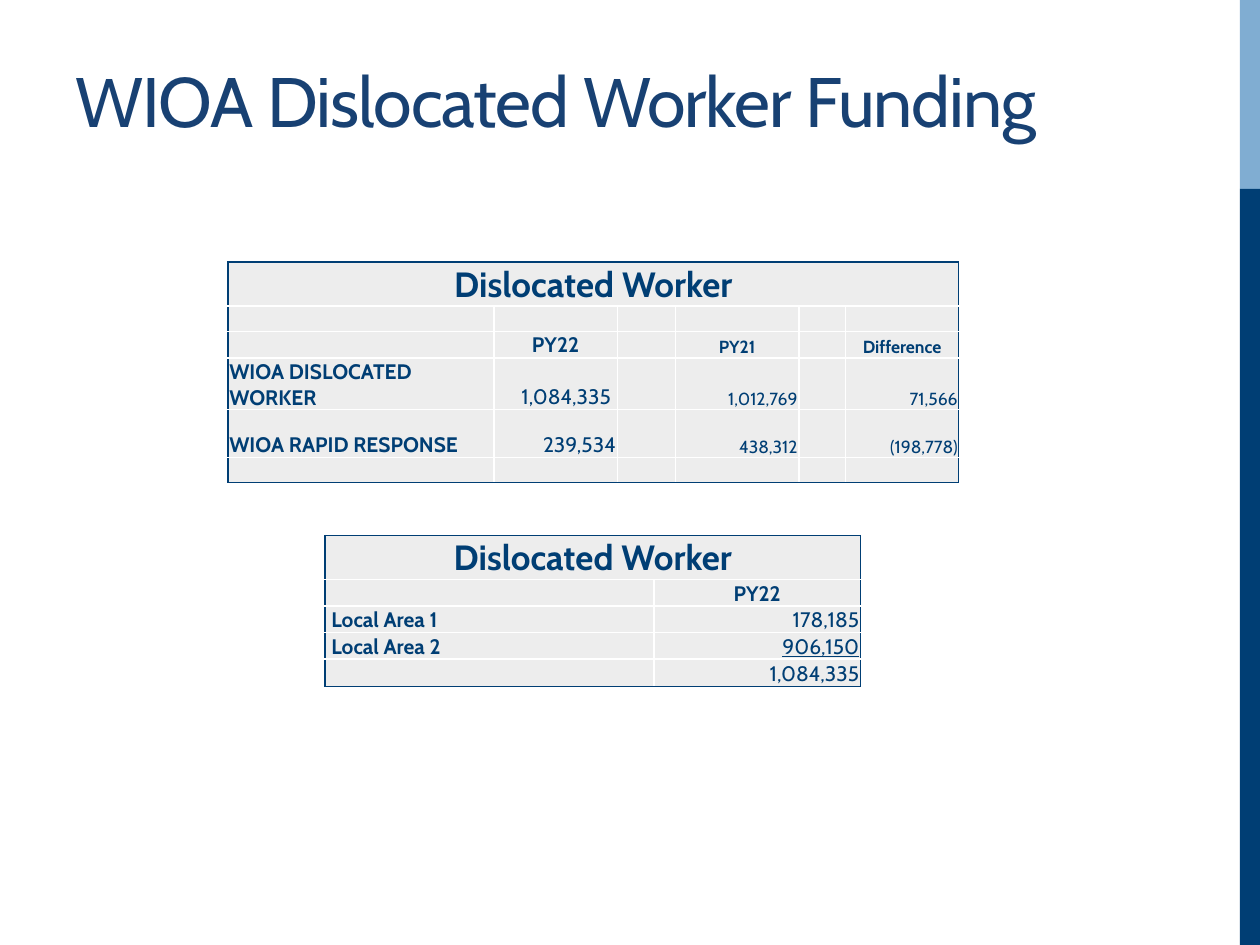
from pptx import Presentation
from pptx.dml.color import RGBColor
from pptx.enum.shapes import MSO_SHAPE
from pptx.enum.text import MSO_ANCHOR, PP_ALIGN
from pptx.oxml.ns import qn
from pptx.util import Inches, Pt
from lxml import etree

RECT = MSO_SHAPE.RECTANGLE
BOTTOM = MSO_ANCHOR.BOTTOM
ALIGN = {"l": PP_ALIGN.LEFT, "c": PP_ALIGN.CENTER, "r": PP_ALIGN.RIGHT}

NAVY, TITLE_BLUE, SKY, GREY, WHITE = "003E74", "184173", "80ADD2", "EDEDED", "FFFFFF"
FONT = "Cabin"
HEADING = dict(size=20, bold=True, align="c")


def rgb(color):
    return RGBColor.from_string(color)


def write(tf, text, size=12, bold=False, color=NAVY, align="l", underline=None, spacing=None):
    """Fill the first paragraph of a text frame; spacing is in hundredths of a point."""
    p = tf.paragraphs[0]
    p.alignment = ALIGN[align]
    r = p.add_run()
    r.text = text
    r.font.name, r.font.size, r.font.bold = FONT, Pt(size), bold
    r.font.underline = underline
    r.font.color.rgb = rgb(color)
    if spacing is not None:
        r.font._element.set("spc", str(spacing))


def border(cell, side, color):
    """Draw one side (L, R, T or B) of a table cell, one point wide."""
    line = etree.SubElement(cell._tc.get_or_add_tcPr(), qn(f"a:ln{side}"), w=str(Pt(1)))
    fill = etree.SubElement(line, qn("a:solidFill"))
    etree.SubElement(fill, qn("a:srgbClr"), val=color)


class Deck:
    """Slide on a grid of 100 columns by 75 rows, each cell 0.1 inch."""

    def __init__(self):
        self.prs = Presentation()
        self.prs.slide_width, self.prs.slide_height = Inches(10), Inches(7.5)
        self.unit = self.prs.slide_width / 100
        self.s = self.prs.slides.add_slide(self.prs.slide_layouts[6])

    def grid(self, *cells):
        return [round(n * self.unit) for n in cells]

    def bar(self, col, row, cols, rows, color):
        sp = self.s.shapes.add_shape(RECT, *self.grid(col, row, cols, rows))
        sp.shadow.inherit = False
        sp.fill.solid()
        sp.fill.fore_color.rgb = rgb(color)
        sp.line.fill.background()

    def title(self, col, row, cols, rows, text):
        tf = self.s.shapes.add_textbox(*self.grid(col, row, cols, rows)).text_frame
        tf.word_wrap = True
        tf.vertical_anchor = BOTTOM
        write(tf, text, size=40, color=TITLE_BLUE, spacing=-60)

    def table(self, col, row, widths, heights, heading, body):
        """Body maps (row, column) to (text, format); a format may hold left or right padding."""
        area = self.grid(col, row, sum(widths), sum(heights))
        table = self.s.shapes.add_table(len(heights), len(widths), *area).table
        table.first_row = table.horz_banding = False
        for column, width in zip(table.columns, self.grid(*widths)):
            column.width = width
        for line, height in zip(table.rows, self.grid(*heights)):
            line.height = height
        table.cell(0, 0).merge(table.cell(0, len(widths) - 1))
        content = {(0, 0): (heading, HEADING), **body}
        for i in range(len(heights)):
            for j in range(len(widths)):
                cell = table.cell(i, j)
                self.style_cell(cell, dict(
                    L=j == 0,
                    R=j == len(widths) - 1 or cell.is_merge_origin,
                    T=i == 0,
                    B=i == len(heights) - 1))
                self.fill_cell(cell, *content.get((i, j), ("", {})))

    def style_cell(self, cell, outer):
        for side, is_outer in outer.items():
            border(cell, side, NAVY if is_outer else WHITE)
        cell.fill.solid()
        cell.fill.fore_color.rgb = rgb(GREY)
        cell.vertical_anchor = BOTTOM

    def fill_cell(self, cell, text, style):
        style = dict(style)
        cell.margin_left = Inches(style.pop("left", 0.01))
        cell.margin_right = Inches(style.pop("right", 0.01))
        cell.margin_top, cell.margin_bottom = Inches(0.01), 0
        if text:
            write(cell.text_frame, text, **style)
        else:
            p = cell.text_frame.paragraphs[0]
            etree.SubElement(p._p, qn("a:endParaRPr"), sz="1000")


def main():
    deck = Deck()
    deck.bar(98.4, 0, 1.6, 15, SKY)
    deck.bar(98.4, 15, 1.6, 60, NAVY)
    deck.title(5, 1.7, 83.3, 10, "WIOA Dislocated Worker Funding")

    label = dict(bold=True)
    area = dict(bold=True, left=0.05)
    header = dict(bold=True, align="c")
    small_header = dict(header, size=10)
    value = dict(align="r")
    small_value = dict(value, size=10)

    deck.table(
        18.1, 20.8, [21.1, 9.8, 4.6, 9.8, 3.7, 9], [3.5, 2, 2.1, 4.1, 3.8, 2],
        "Dislocated Worker",
        {
            (2, 1): ("PY22", header),
            (2, 3): ("PY21", small_header),
            (2, 5): ("Difference", small_header),
            (3, 0): ("WIOA DISLOCATED WORKER", label),
            (3, 1): ("1,084,335", dict(value, right=0.05)),
            (3, 3): ("1,012,769", small_value),
            (3, 5): ("71,566", small_value),
            (4, 0): ("WIOA RAPID RESPONSE", label),
            (4, 1): ("239,534", value),
            (4, 3): ("438,312", small_value),
            (4, 5): ("(198,778)", small_value),
        })
    deck.table(
        25.8, 42.5, [26.1, 16.4], [3.5, 2.1, 2.1, 2.1, 2.2],
        "Dislocated Worker",
        {
            (1, 1): ("PY22", header),
            (2, 0): ("Local Area 1", area),
            (2, 1): ("178,185", value),
            (3, 0): ("Local Area 2", area),
            (3, 1): ("906,150", dict(value, underline=True)),
            (4, 1): ("1,084,335", value),
        })
    deck.prs.save("out.pptx")


if __name__ == "__main__":
    main()
